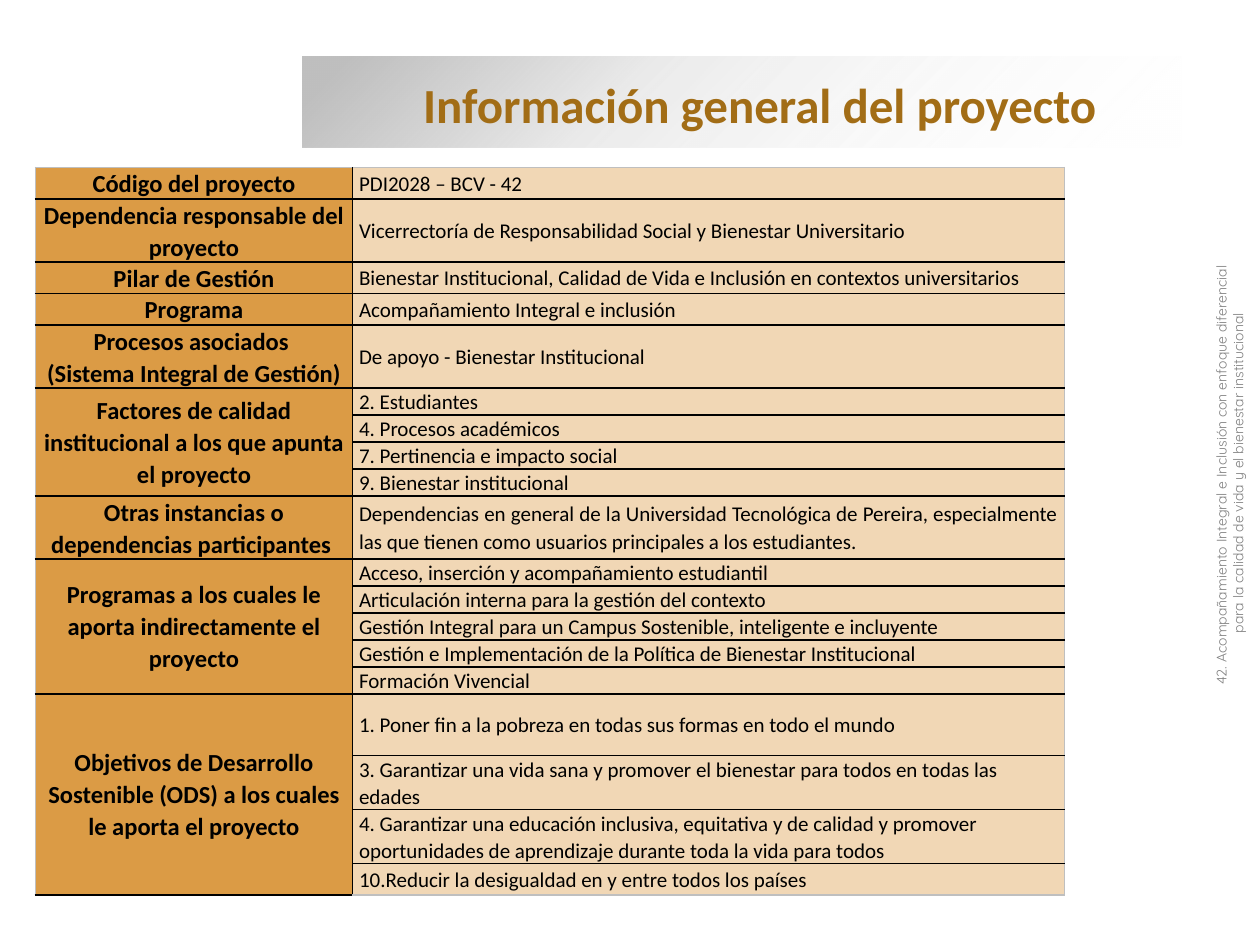
import dataclasses

import lxml.etree
import pptx
import pptx.dml.color
import pptx.enum.shapes
import pptx.enum.text
import pptx.oxml.ns
import pptx.util

ALIGN = pptx.enum.text.PP_ALIGN
MIDDLE = pptx.enum.text.MSO_ANCHOR.MIDDLE
JUSTIFIED = {"alignment": ALIGN.JUSTIFY}
SPACED = {"space_after": pptx.util.Pt(8)}
COLUMNS, ROWS = 1000, 750
LINE, DOUBLE, GOAL = 19, 33, 25


@dataclasses.dataclass(frozen=True)
class Theme:
    """Colours, fonts and type sizes of the slide."""

    title: str = "A26D16"
    label_fill: str = "DB9B45"
    value_fill: str = "F1D7B5"
    text: str = "000000"
    side: str = "808080"
    rule: str = "000000"
    frame: str = "BFBFBF"
    band: tuple = ((5, "BFBFBF", 100), (37, "BFBFBF", 31), (100, "FFFFFF", 0))
    font: str = "Calibri"
    side_font: str = "Quicksand"
    title_size: int = 28
    label_size: int = 14
    value_size: int = 12
    side_size: int = 8


THEME = Theme()

SECTIONS = [
    ("Código del proyecto", [("PDI2028 – BCV - 42", LINE, {})]),
    ("Dependencia responsable del proyecto", [
        ("Vicerrectoría de Responsabilidad Social y Bienestar Universitario", DOUBLE, {})]),
    ("Pilar de Gestión", [
        ("Bienestar Institucional, Calidad de Vida e Inclusión en contextos universitarios", LINE, {})]),
    ("Programa", [("Acompañamiento Integral e inclusión", LINE, JUSTIFIED)]),
    ("Procesos asociados \v(Sistema Integral de Gestión)", [
        ("De apoyo - Bienestar Institucional", DOUBLE, {})]),
    ("Factores de calidad institucional a los que apunta el proyecto", [
        ("2. Estudiantes", LINE, {}),
        ("4. Procesos académicos", LINE, {}),
        ("7. Pertinencia e impacto social", LINE, {}),
        ("9. Bienestar institucional", LINE, {})]),
    ("Otras instancias o dependencias participantes ", [
        ("Dependencias en general de la Universidad Tecnológica de Pereira, especialmente "
         "las que tienen como usuarios principales a los estudiantes.", DOUBLE, JUSTIFIED)]),
    ("Programas a los cuales le aporta indirectamente el proyecto", [
        ("Acceso, inserción y acompañamiento estudiantil", LINE, {}),
        ("Articulación interna para la gestión del contexto", LINE, SPACED),
        ("Gestión Integral para un Campus Sostenible, inteligente e incluyente", LINE, SPACED),
        ("Gestión e Implementación de la Política de Bienestar Institucional", LINE, SPACED),
        ("Formación Vivencial", LINE, SPACED)]),
    ("Objetivos de Desarrollo Sostenible (ODS) a los cuales le aporta el proyecto", [
        ("1. Poner fin a la pobreza en todas sus formas en todo el mundo", 49, {}),
        ("3. Garantizar una vida sana y promover el bienestar para todos en todas las edades", GOAL, {}),
        ("4. Garantizar una educación inclusiva, equitativa y de calidad y promover "
         "oportunidades de aprendizaje durante toda la vida para todos", GOAL, {}),
        ("10.Reducir la desigualdad en y entre todos los países", GOAL, {})]),
]


def grid(*counts):
    """Turn counts of grid units into lengths."""
    return [pptx.util.Inches(count / 100) for count in counts]


def set_all(target, values):
    """Set each attribute named in a dict."""
    for name, value in values.items():
        setattr(target, name, value)


def write(para, text, size, color, font=THEME.font, bold=False, **layout):
    """Fill a paragraph with text in one format."""
    para.text = text
    set_all(para, layout)
    for span in para.runs:
        set_all(span.font, {"name": font, "size": pptx.util.Pt(size), "bold": bold})
        span.font.color.rgb = pptx.dml.color.RGBColor.from_string(color)


def child(parent, tag, **attributes):
    """Append a drawing element and return it."""
    return lxml.etree.SubElement(parent, pptx.oxml.ns.qn(tag), attributes)


def add_band(shapes):
    """Draw the fading band behind the title."""
    band = shapes.add_shape(pptx.enum.shapes.MSO_SHAPE.RECTANGLE, *grid(240, 45, 698, 72))
    band.shadow.inherit = False
    band.line.fill.background()
    band.fill.gradient()
    band.fill.gradient_angle = 315
    stops = next(band.element.iter(pptx.oxml.ns.qn("a:gsLst")))
    for stop in list(stops):
        stops.remove(stop)
    for position, color, alpha in THEME.band:
        stop = child(stops, "a:gs", pos=str(position * 1000))
        child(child(stop, "a:srgbClr", val=color), "a:alpha", val=str(alpha * 1000))


def add_text(shapes, place, lines, rotation=0, anchor=None, **style):
    """Add a wrapping text box with one paragraph a line."""
    box = shapes.add_textbox(*grid(*place))
    box.rotation = rotation
    frame = box.text_frame
    set_all(frame, {"word_wrap": True, "vertical_anchor": anchor,
                    "auto_size": pptx.enum.text.MSO_AUTO_SIZE.SHAPE_TO_FIT_TEXT})
    for index, line in enumerate(lines):
        write(frame.paragraphs[0] if index == 0 else frame.add_paragraph(), line, **style)


def format_cell(cell, fill, inset, outer):
    """Set margins, borders and fill of a cell; outer names its edges on the frame."""
    set_all(cell, dict(zip(("margin_left", "margin_top", "margin_right", "margin_bottom"),
                           grid(inset, 0, inset, 0))))
    cell.vertical_anchor = MIDDLE
    properties = cell._tc.get_or_add_tcPr()
    for side in "LRTB":
        line = child(properties, f"a:ln{side}", w=str(pptx.util.Pt(1)))
        color = THEME.frame if side in outer else THEME.rule
        child(child(line, "a:solidFill"), "a:srgbClr", val=color)
    cell.fill.solid()
    cell.fill.fore_color.rgb = pptx.dml.color.RGBColor.from_string(fill)


def add_project_table(shapes):
    """Add the table, with one merged label beside each section's values."""
    values = [value for _, section in SECTIONS for value in section]
    place = grid(28, 133, 817, 577)
    holder = shapes.add_table(len(values), 2, *place)
    table = holder.table
    set_all(table, {"first_row": False, "horz_banding": False})
    for column, width in zip(table.columns, grid(252, 565)):
        column.width = width
    last = len(values) - 1
    for index, (text, height, layout) in enumerate(values):
        table.rows[index].height, = grid(height)
        ends = "T" * (index == 0) + "B" * (index == last)
        format_cell(table.cell(index, 0), THEME.label_fill, 4, "L" + ends)
        value = table.cell(index, 1)
        format_cell(value, THEME.value_fill, 5, "R" + ends)
        write(value.text_frame.paragraphs[0], text, THEME.value_size, THEME.text,
              line_spacing=1.07, **layout)
    start = 0
    for text, section in SECTIONS:
        label = table.cell(start, 0)
        if len(section) > 1:
            label.merge(table.cell(start + len(section) - 1, 0))
        write(label.text_frame.paragraphs[0], text, THEME.label_size, THEME.text,
              bold=True, alignment=ALIGN.CENTER, line_spacing=1.07)
        start += len(section)
    holder.height = place[-1]


def main():
    """Build the slide and save the deck."""
    deck = pptx.Presentation()
    deck.slide_width, deck.slide_height = grid(COLUMNS, ROWS)
    page = deck.slides.add_slide(deck.slide_layouts[6])
    heading = page.shapes.add_group_shape().shapes
    add_band(heading)
    add_text(heading, (326, 54, 620, 57), ["Información general del proyecto"], anchor=MIDDLE,
             size=THEME.title_size, color=THEME.title, bold=True)
    add_text(page.shapes, (734, 357, 484, 37),
             ["42. Acompañamiento Integral e Inclusión con enfoque diferencial ",
              "para la calidad de vida y el bienestar institucional"],
             rotation=270, size=THEME.side_size, color=THEME.side, font=THEME.side_font,
             alignment=ALIGN.CENTER)
    add_project_table(page.shapes)
    deck.save("out.pptx")


if __name__ == "__main__":
    main()
